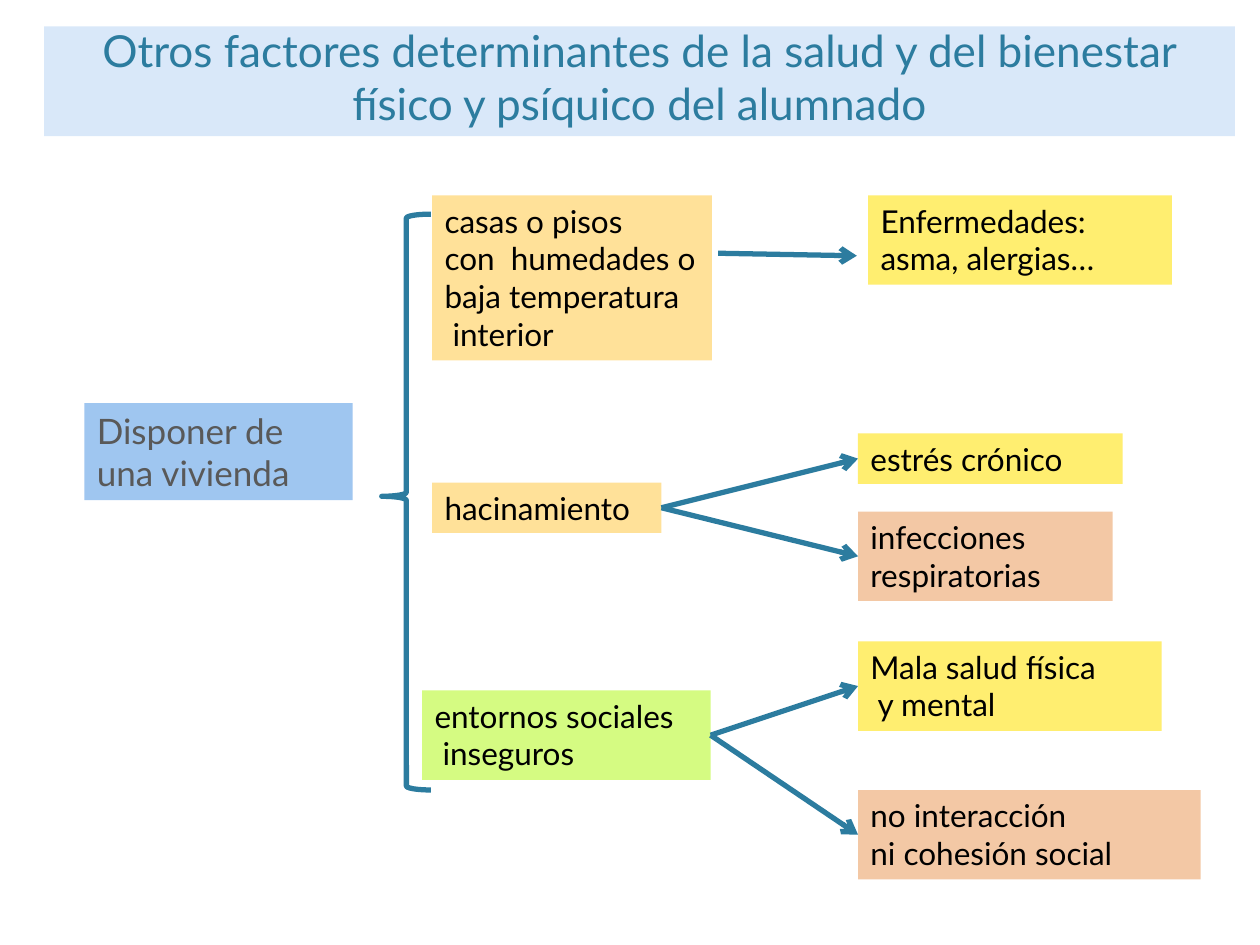
from lxml.etree import SubElement
from pptx import Presentation
from pptx.dml.color import RGBColor
from pptx.enum.shapes import MSO_CONNECTOR, MSO_SHAPE
from pptx.enum.text import MSO_ANCHOR, MSO_AUTO_SIZE, PP_ALIGN
from pptx.oxml.ns import qn
from pptx.util import Inches, Pt

FONT = "Lato"
TEAL, BLACK, GREY = "2C7C9F", "000000", "595959"
PALE_BLUE, BLUE, GREEN = "D9E8F9", "9FC6F0", "D5FB82"
AMBER, YELLOW, PEACH = "FFE199", "FFEE70", "F3C8A5"
COLUMNS, ROWS = 100, 75
CAUSE_COLUMN, EFFECT_COLUMN = 34.3, 68.1
ONE_LINE, TWO_LINES, FOUR_LINES = 4, 7.1, 13.1
TOP, LEFT, RIGHT = 0, 1, 3

deck = Presentation()
deck.slide_width, deck.slide_height = Inches(10), Inches(7.5)
page = deck.slides.add_slide(deck.slide_layouts[5])
column = deck.slide_width / COLUMNS
row = deck.slide_height / ROWS


def paint(color_format, color):
    color_format.rgb = RGBColor.from_string(color)


def write(shape, text, size, color, fill, align):
    shape.fill.solid()
    paint(shape.fill.fore_color, fill)
    frame = shape.text_frame
    frame.text = text
    frame.word_wrap = True
    for para in frame.paragraphs:
        para.alignment = align
        for span in para.runs:
            span.font.name = FONT
            span.font.size = Pt(size)
            paint(span.font.color, color)


title = page.shapes.title
title.left, title.top = int(3.5 * column), int(2.1 * row)
title.width, title.height = int(94.5 * column), int(8.7 * row)
write(
    title,
    "Otros factores determinantes de la salud y del bienestar físico y psíquico del alumnado",
    25.2, TEAL, PALE_BLUE, PP_ALIGN.CENTER,
)
title.text_frame.vertical_anchor = MSO_ANCHOR.BOTTOM
title.text_frame.auto_size = MSO_AUTO_SIZE.NONE

box_rows = [
    ("housing", "Disponer de una vivienda", 6.7, 32, 21.3, 7.7, BLUE, 20, GREY),
    ("damp", "casas o pisos\ncon  humedades o\nbaja temperatura\n interior",
     CAUSE_COLUMN, 15.5, 22.2, FOUR_LINES, AMBER, 18, BLACK),
    ("illness", "Enfermedades:\nasma, alergias…", 68.9, 15.5, 24.1, TWO_LINES, YELLOW, 18, BLACK),
    ("crowding", "hacinamiento", CAUSE_COLUMN, 38.3, 18.2, ONE_LINE, AMBER, 18, BLACK),
    ("stress", "estrés crónico", EFFECT_COLUMN, 34.4, 21, ONE_LINE, YELLOW, 18, BLACK),
    ("infections", "infecciones\nrespiratorias", EFFECT_COLUMN, 40.6, 20.2, TWO_LINES, PEACH, 18, BLACK),
    ("unsafe", "entornos sociales\n inseguros", 33.5, 54.8, 22.9, TWO_LINES, GREEN, 18, BLACK),
    ("poor health", "Mala salud física\n y mental", EFFECT_COLUMN, 50.9, 24.1, TWO_LINES, YELLOW, 18, BLACK),
    ("isolation", "no interacción\nni cohesión social", EFFECT_COLUMN, 62.7, 27.2, TWO_LINES, PEACH, 18, BLACK),
]
boxes = {}
for name, text, left, top, width, height, fill, size, color in box_rows:
    box = page.shapes.add_shape(
        MSO_SHAPE.RECTANGLE,
        int(left * column), int(top * row), int(width * column), int(height * row),
    )
    box.shadow.inherit = False
    box.line.fill.background()
    write(box, text, size, color, fill, PP_ALIGN.LEFT)
    box.text_frame.vertical_anchor = MSO_ANCHOR.TOP
    box.text_frame.auto_size = MSO_AUTO_SIZE.SHAPE_TO_FIT_TEXT
    boxes[name] = box

brace = page.shapes.add_shape(
    MSO_SHAPE.LEFT_BRACE,
    int(30.3 * column), int(17 * row), int(3.9 * column), int(45.7 * row),
)
brace.shadow.inherit = False
brace.fill.background()
brace.adjustments[0], brace.adjustments[1] = 0.08, 0.49
strokes = [brace]

loose_arrow = page.shapes.add_connector(
    MSO_CONNECTOR.STRAIGHT,
    int(57 * column), int(20.1 * row), int(68 * column), int(20.3 * row),
)
arrows = [loose_arrow]
for cause, effect in [
    ("crowding", "stress"),
    ("crowding", "infections"),
    ("unsafe", "poor health"),
    ("unsafe", "isolation"),
]:
    arrow = page.shapes.add_connector(MSO_CONNECTOR.STRAIGHT, 0, 0, 0, 0)
    arrow.begin_connect(boxes[cause], RIGHT)
    arrow.end_connect(boxes[effect], LEFT)
    arrows.append(arrow)

for stroke in strokes + arrows:
    stroke.line.width = Pt(3)
    paint(stroke.line.color, TEAL)
for arrow in arrows:
    properties = arrow.line.color and arrow._element.spPr
    SubElement(properties.find(qn("a:ln")), qn("a:tailEnd"), type="arrow")
    SubElement(properties, qn("a:effectLst"))

deck.save("out.pptx")
